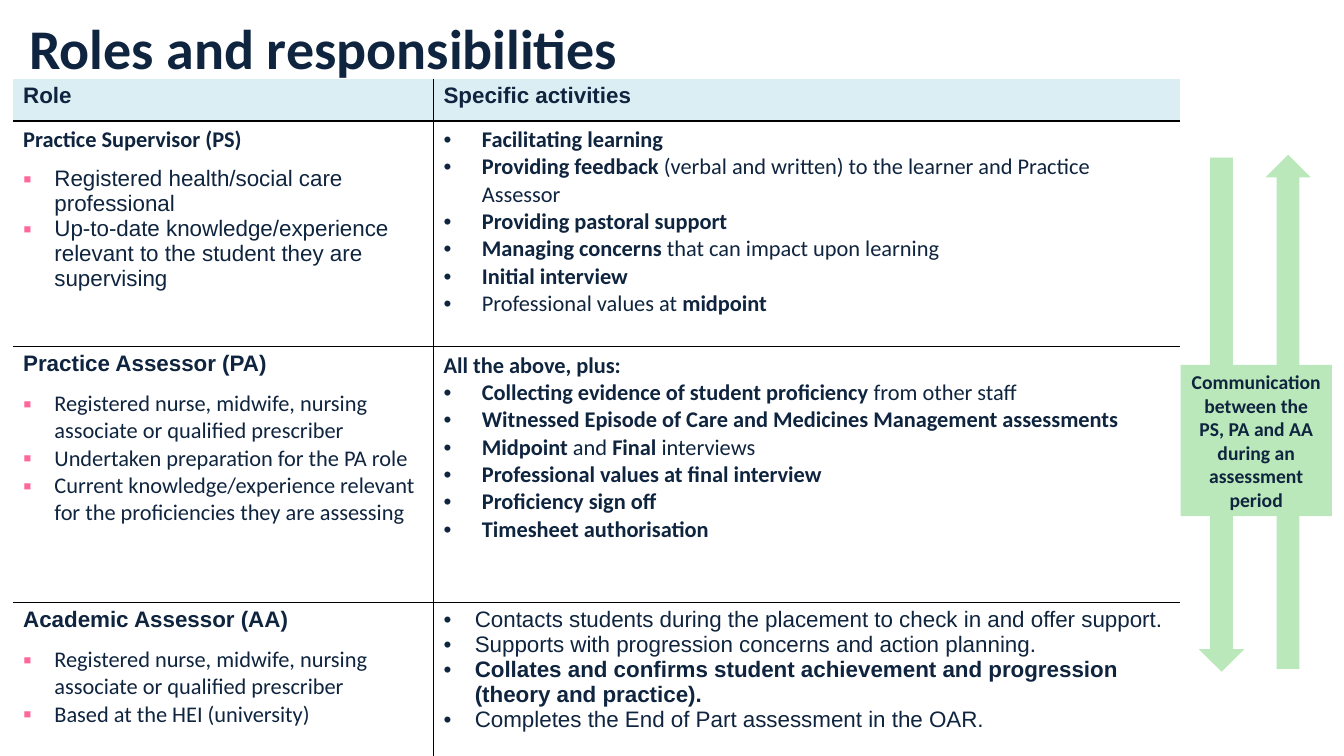
from lxml.etree import SubElement
from pptx import Presentation
from pptx.dml.color import RGBColor as RGB
from pptx.enum.shapes import MSO_SHAPE as Shape
from pptx.enum.text import MSO_ANCHOR as Anchor, PP_ALIGN as Align
from pptx.oxml import parse_xml
from pptx.oxml.ns import nsdecls, qn
from pptx.util import Inches, Pt

COLOURS = {"navy": "0F243E", "header": "DBEEF4", "pink": "FF6699",
           "green": "BAE8BA", "rule": "000000"}
WIDTH, HEIGHT = 13.33, 7.5
COLUMNS = [4.17, 7.4]
ROWS = [0.42, 2.24, 2.54, 1.62]
NO_STYLE = "{2D5ABB26-0587-4C30-8999-92F81FD0307C}"

# Each role: heading, heading font, list font, list items
ROLES = [
    ("Practice Supervisor (PS)", "Calibri", "Arial", [
        "Registered health/social care professional",
        "Up-to-date knowledge/experience relevant to the student they are supervising"]),
    ("Practice Assessor (PA)", "Arial", "Calibri", [
        "Registered nurse, midwife, nursing associate or qualified prescriber",
        "Undertaken preparation for the PA role",
        "Current knowledge/experience relevant for the proficiencies they are assessing"]),
    ("Academic Assessor (AA)", "Arial", "Calibri", [
        "Registered nurse, midwife, nursing associate or qualified prescriber",
        "Based at the HEI (university)"]),
]
# Each set: lead-in, font, indent, items with bold parts between asterisks
ACTIVITIES = [
    (None, "Calibri", 0.38, [
        "*Facilitating learning*",
        "*Providing feedback *(verbal and written) to the learner and Practice Assessor",
        "*Providing pastoral support*",
        "*Managing concerns *that can impact upon learning",
        "*Initial interview*",
        "Professional values at *midpoint*"]),
    ("*All the above, plus:*", "Calibri", 0.38, [
        "*Collecting evidence of student proficiency *from other staff",
        "*Witnessed Episode of Care and Medicines Management assessments*",
        "*Midpoint* and *Final* interviews",
        "*Professional values at final interview*",
        "*Proficiency sign off*",
        "*Timesheet authorisation*"]),
    (None, "Arial", 0.31, [
        "Contacts students during the placement to check in and offer support.",
        "Supports with progression concerns and action planning.",
        "*Collates and confirms student achievement and progression (theory and practice).*",
        "Completes the End of Part assessment in the OAR."]),
]


def colour(name):
    return RGB.from_string(COLOURS[name])


def write(para, text, font, size=16):
    """Add runs, switching bold at each asterisk."""
    for index, part in enumerate(text.split("*")):
        if part:
            span = para.add_run()
            span.text = part
            span.font.name, span.font.size = font, Pt(size)
            span.font.bold = index % 2 == 1
            span.font.color.rgb = colour("navy")


def add_bullet(para, mark, indent, tint=None):
    props = para._p.get_or_add_pPr()
    props.set("marL", str(Inches(indent)))
    props.set("indent", str(-Inches(indent)))
    if tint:
        SubElement(SubElement(props, qn("a:buClr")), qn("a:srgbClr"), val=COLOURS[tint])
        SubElement(props, qn("a:buSzPct"), val="110000")
    SubElement(props, qn("a:buFont"), typeface="Arial")
    SubElement(props, qn("a:buChar"), char=mark)


def next_para(frame):
    first = frame.paragraphs[0]
    return frame.add_paragraph() if first.runs else first


def add_borders(cell, sides):
    props = cell._tc.get_or_add_tcPr()
    for index, side in enumerate(side for side in "LRTB" if side in sides):
        props.insert(index, parse_xml(
            f'<a:ln{side} {nsdecls("a")} w="12700"><a:solidFill>'
            f'<a:srgbClr val="{COLOURS["rule"]}"/></a:solidFill></a:ln{side}>'))


def fill_role(frame, heading, heading_font, font, items):
    write(next_para(frame), f"*{heading}*", heading_font)
    for index, item in enumerate(items):
        para = next_para(frame)
        add_bullet(para, "▪", 0.31, "pink")
        if index == 0:
            para.space_before = Pt(9.5)
        write(para, item, font)


def fill_activities(frame, lead, font, indent, items):
    if lead:
        write(next_para(frame), lead, font)
    for item in items:
        para = next_para(frame)
        add_bullet(para, "•", indent)
        write(para, item, font)


def add_title(page, left, top, width, height):
    title = page.shapes.title
    title.left, title.top = Inches(left), Inches(top)
    title.width, title.height = Inches(width), Inches(height)
    frame = title.text_frame
    frame.margin_left = frame.margin_right = frame.margin_top = frame.margin_bottom = 0
    frame.vertical_anchor = Anchor.TOP
    frame.paragraphs[0].alignment = Align.LEFT
    write(frame.paragraphs[0], "*Roles and responsibilities*", "Calibri", 40)


def add_role_table(page, left, top):
    table = page.shapes.add_table(
        len(ROWS), len(COLUMNS), Inches(left), Inches(top),
        Inches(sum(COLUMNS)), Inches(sum(ROWS))).table
    table.first_row = table.horz_banding = False
    table._tbl.tblPr.find(qn("a:tableStyleId")).text = NO_STYLE
    for column, width in zip(table.columns, COLUMNS):
        column.width = Inches(width)
    for row, height in zip(table.rows, ROWS):
        row.height = Inches(height)

    # Header row
    for cell, label in zip(table.rows[0].cells, ("Role", "Specific activities")):
        write(cell.text_frame.paragraphs[0], f"*{label}*", "Arial")
    # One row per role
    for index, (role, activities) in enumerate(zip(ROLES, ACTIVITIES), 1):
        fill_role(table.cell(index, 0).text_frame, *role)
        fill_activities(table.cell(index, 1).text_frame, *activities)
    # Fills and inner rules
    last = len(ROWS) - 1
    for r in range(len(ROWS)):
        for c in range(len(COLUMNS)):
            cell = table.cell(r, c)
            if r == 0:
                cell.fill.solid()
                cell.fill.fore_color.rgb = colour("header")
            else:
                cell.fill.background()
            add_borders(cell, ("R" if c == 0 else "L") + ("T" if r else "")
                        + ("B" if r < last else ""))


def add_green_shape(group, kind, left, top, width, height):
    shape = group.shapes.add_shape(
        kind, Inches(left), Inches(top), Inches(width), Inches(height))
    shape.shadow.inherit = False
    shape.fill.solid()
    shape.fill.fore_color.rgb = colour("green")
    shape.line.fill.background()
    return shape


def add_communication(page, left, top, side):
    """Square label with an arrow running down and one running up behind it."""
    group = page.shapes.add_group_shape()
    length, thickness = 5.1, 0.45
    for across, down, turn in ((0.27, 0.33, 90), (0.71, 0.31, 270)):
        arrow = add_green_shape(
            group, Shape.RIGHT_ARROW, left + across * side - length / 2,
            top + down * side - thickness / 2, length, thickness)
        arrow.rotation = turn
    box = add_green_shape(group, Shape.RECTANGLE, left, top, side, side)
    frame = box.text_frame
    frame.word_wrap = True
    frame.vertical_anchor = Anchor.MIDDLE
    frame.paragraphs[0].alignment = Align.CENTER
    write(frame.paragraphs[0], "*Communication between the PS, PA and AA "
          "during an assessment period*", "Calibri", 14)


def main():
    deck = Presentation()
    deck.slide_width, deck.slide_height = Inches(WIDTH), Inches(HEIGHT)
    page = deck.slides.add_slide(deck.slide_layouts[5])
    add_title(page, 0.29, 0.13, 10.87, 1.11)
    add_role_table(page, 0.13, 0.78)
    add_communication(page, 11.71, 3.62, 1.5)
    deck.save("out.pptx")


if __name__ == "__main__":
    main()
